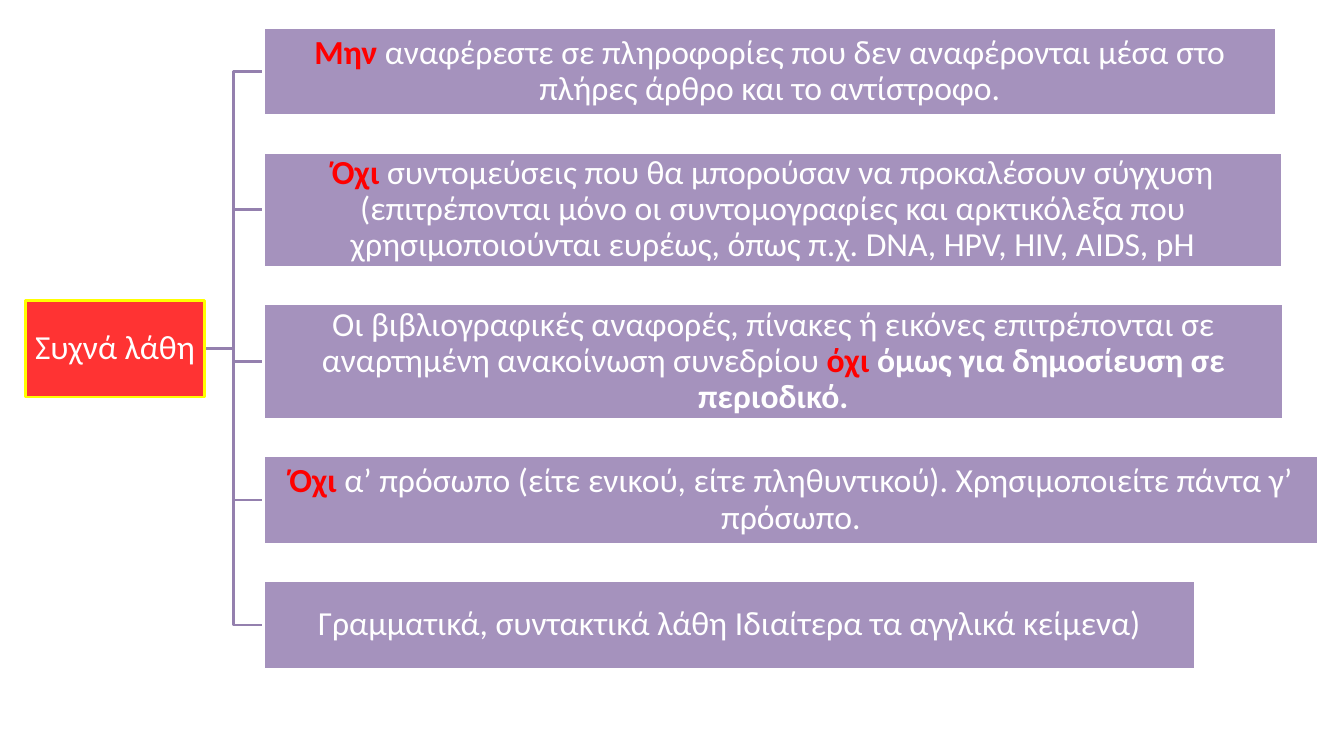
"""Builds a slide with a tree of common mistakes in abstracts."""
from lxml.etree import SubElement
from pptx import Presentation
from pptx.dml.color import RGBColor as RGB
from pptx.enum.shapes import MSO_CONNECTOR as LINK, MSO_SHAPE as SHAPE
from pptx.enum.text import MSO_ANCHOR as ANCHOR, PP_ALIGN as ALIGN
from pptx.oxml.ns import qn
from pptx.util import Inches, Pt

HUES = {"root": "FF0000", "edge": "FFFF00", "box": "8064A2",
        "link": "9480AE", "white": "FFFFFF", "red": "FF0000"}
LEFT, TOP, GAP = 2.61, 0.27, 0.36
ROOT = (0.25, 2.98, 1.78, 0.96)
MIDDLE = ROOT[1] + ROOT[3] / 2

ITEMS = [
    (10.05, 0.88, [
        ("Μην", "red", True),
        (" αναφέρεστε σε πληροφορίες που δεν αναφέρονται μέσα στο πλήρες άρθρο και το αντίστροφο.", "white", False)]),
    (10.11, 1.14, [
        ("Όχι", "red", True),
        (" συντομεύσεις που θα μπορούσαν να προκαλέσουν σύγχυση (επιτρέπονται μόνο οι συντομογραφίες και "
         "αρκτικόλεξα που χρησιμοποιούνται ευρέως, όπως π.χ. DNA, HPV, HIV, AIDS, pH", "white", False)]),
    (10.12, 1.15, [
        ("Οι βιβλιογραφικές αναφορές, πίνακες ή εικόνες επιτρέπονται σε αναρτημένη ανακοίνωση συνεδρίου ",
         "white", False),
        ("όχι", "red", True),
        (" όμως για δημοσίευση σε περιοδικό.", "white", True)]),
    (10.47, 0.88, [
        ("Όχι", "red", True),
        (" α’ πρόσωπο (είτε ενικού, είτε πληθυντικού). Χρησιμοποιείτε πάντα γ’ πρόσωπο.", "white", False)]),
    (9.25, 0.88, [
        ("Γραμματικά, συντακτικά λάθη Ιδιαίτερα τα αγγλικά κείμενα)", "white", False)]),
]

deck = Presentation()
deck.slide_width, deck.slide_height = Inches(13.33), Inches(7.5)
slide = deck.slides.add_slide(deck.slide_layouts[6])


def add_box(place, fill, alpha, edge, runs):
    box = slide.shapes.add_shape(SHAPE.RECTANGLE, *map(Inches, place))
    box.shadow.inherit = False
    box.fill.solid()
    box.fill.fore_color.rgb = RGB.from_string(HUES[fill])
    tint = box.fill._xPr.find(qn("a:solidFill"))[0]
    SubElement(tint, qn("a:alpha"), val=str(alpha * 1000))
    box.line.color.rgb = RGB.from_string(HUES[edge])
    box.line.width = Pt(2)
    frame = box.text_frame
    frame.word_wrap = True
    frame.vertical_anchor = ANCHOR.MIDDLE
    frame.margin_left = frame.margin_right = Inches(0.02)
    frame.margin_top = frame.margin_bottom = Inches(0.02)
    para = frame.paragraphs[0]
    para.alignment = ALIGN.CENTER
    para.line_spacing = 0.9
    for text, hue, bold in runs:
        run = para.add_run()
        run.text = text
        run.font.name, run.font.size, run.font.bold = "Calibri", Pt(24), bold
        run.font.color.rgb = RGB.from_string(HUES[hue])
    return box


links = []
top = TOP
for width, height, runs in ITEMS:
    ends = (ROOT[0] + ROOT[2], MIDDLE, LEFT, top + height / 2)
    link = slide.shapes.add_connector(LINK.ELBOW, *map(Inches, ends))
    link.line.color.rgb = RGB.from_string(HUES["link"])
    link.line.width = Pt(2)
    SubElement(link._element.spPr, qn("a:effectLst"))
    box = add_box((LEFT, top, width, height), "box", 70, "white", runs)
    link.end_connect(box, 1)
    links.append(link)
    top += height + GAP

root = add_box(ROOT, "root", 80, "edge", [("Συχνά λάθη", "white", False)])
for link in links:
    link.begin_connect(root, 3)

deck.save("out.pptx")
